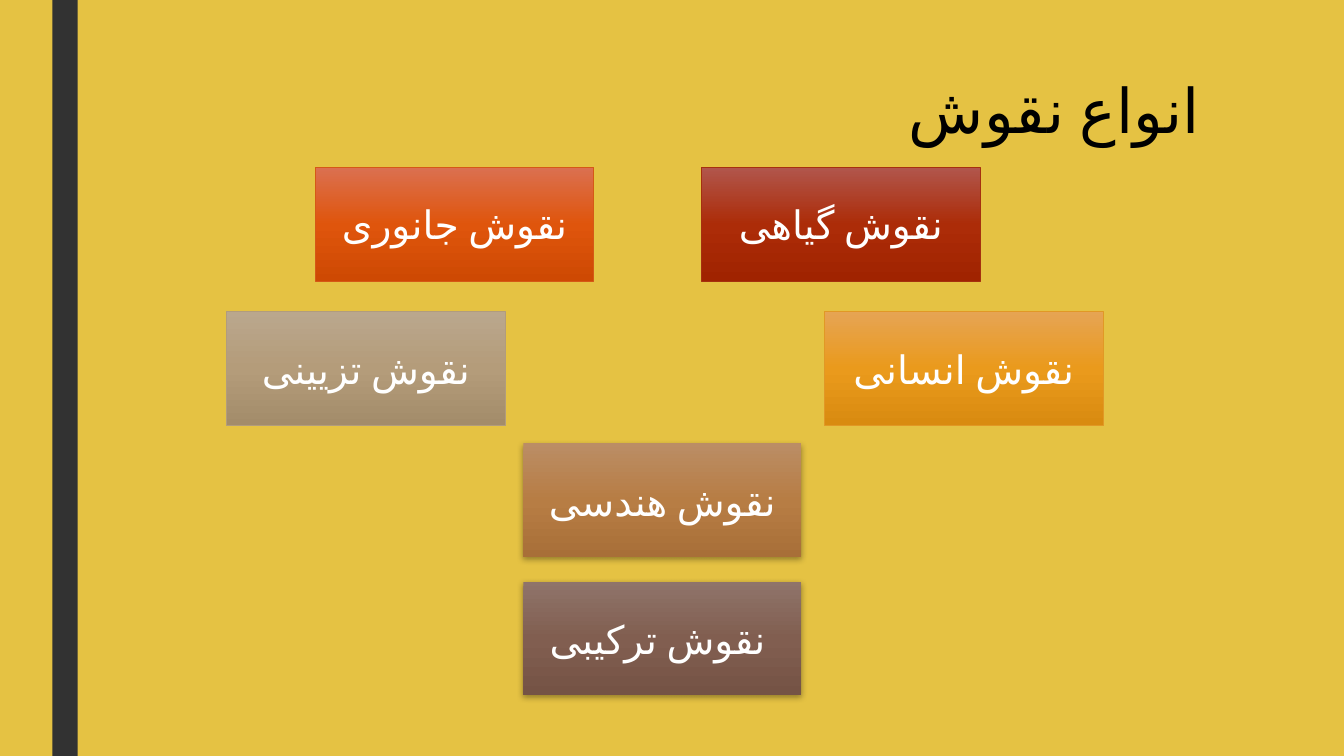
from copy import deepcopy

from pptx import Presentation
from pptx.dml.color import RGBColor
from pptx.enum.lang import MSO_LANGUAGE_ID as LANG
from pptx.enum.shapes import MSO_SHAPE as SHAPE
from pptx.enum.text import MSO_ANCHOR as ANCHOR, PP_ALIGN as ALIGN
from pptx.oxml import parse_xml
from pptx.oxml.ns import nsdecls, qn
from pptx.util import Inches, Pt

FONT = "Cabin"
BOX_W, BOX_H = 2.76, 1.13
# text, left, top, gradient from top to bottom, outline (None: soft shadow instead)
MOTIFS = [
    ("نقوش گیاهی", 6.96, 1.66, ("B1564C", "AC2C08", "A02300"), "A5300F"),
    ("نقوش هندسی", 5.19, 4.4, ("BB8D65", "B77D44", "A86F38"), None),
    ("نقوش جانوری", 3.13, 1.66, ("DB7050", "DF550C", "CE4903"), "D55816"),
    ("نقوش انسانی", 8.18, 3.09, ("E6A454", "EA9A1C", "D98B10"), "E19825"),
    ("نقوش تزیینی", 2.25, 3.09, ("BAA78D", "B49C7A", "A38C6A"), "B19C7D"),
    ("نقوش ترکیبی ", 5.19, 5.77, ("8F746A", "815E50", "755345"), None),
]


def rgb(color):
    return RGBColor.from_string(color)


def write(tf, text, size, color, align, anchor):
    tf.word_wrap = True
    tf.vertical_anchor = anchor
    p = tf.paragraphs[0]
    p.alignment = align
    r = p.add_run()
    r.text = text
    formats = {"size": Pt(size), "name": FONT, "bold": False,
               "language_id": LANG.FARSI}
    for name, value in formats.items():
        setattr(r.font, name, value)
    r.font.color.rgb = rgb(color)
    return p


def add_rect(s, left, top, width, height):
    sp = s.shapes.add_shape(SHAPE.RECTANGLE, Inches(left), Inches(top),
                            Inches(width), Inches(height))
    sp.shadow.inherit = False
    sp.line.fill.background()
    return sp


def fill_gradient(sp, colors):
    """Fill from top to bottom with evenly spaced colours."""
    sp.fill.gradient()
    sp.fill.gradient_angle = 270
    stops = sp._element.spPr.find(qn("a:gradFill")).find(qn("a:gsLst"))
    for _ in range(len(colors) - len(stops)):
        stops.append(deepcopy(stops[0]))
    for i, (stop, color) in enumerate(zip(sp.fill.gradient_stops, colors)):
        stop.position = i / (len(colors) - 1)
        stop.color.rgb = rgb(color)


def add_soft_shadow(sp):
    effects = sp._element.spPr.find(qn("a:effectLst"))
    effects.append(parse_xml(
        f'<a:outerShdw {nsdecls("a")} blurRad="{Pt(4.5)}" dist="{Pt(1.5)}" '
        'dir="5400000" algn="ctr" rotWithShape="0"><a:srgbClr val="000000">'
        '<a:alpha val="35000"/></a:srgbClr></a:outerShdw>'))


def add_motif(s, text, left, top, colors, outline):
    sp = add_rect(s, left, top, BOX_W, BOX_H)
    fill_gradient(sp, colors)
    if outline:
        sp.line.color.rgb = rgb(outline)
        sp.line.width = Pt(0.5)
    else:
        add_soft_shadow(sp)
    write(sp.text_frame, text, 28, "FFFFFF", ALIGN.CENTER, ANCHOR.MIDDLE)


def format_title(title, text):
    box = {"left": 1.5, "top": 0.75, "width": 10.5, "height": 1.62}
    for name, value in box.items():
        setattr(title, name, Inches(value))
    p = write(title.text_frame, text, 44, "000000", ALIGN.RIGHT, ANCHOR.TOP)
    p.line_spacing = 0.89
    p._p.get_or_add_pPr().set("rtl", "1")


def main():
    prs = Presentation()
    prs.slide_width, prs.slide_height = Inches(13.33), Inches(7.5)
    s = prs.slides.add_slide(prs.slide_layouts[5])
    s.background.fill.solid()
    s.background.fill.fore_color.rgb = rgb("E5C243")
    bar = add_rect(s, 0.52, 0, 0.25, 7.5)
    bar.fill.solid()
    bar.fill.fore_color.rgb = rgb("323232")
    format_title(s.shapes.title, "انواع نقوش")
    for motif in MOTIFS:
        add_motif(s, *motif)
    prs.save("out.pptx")


if __name__ == "__main__":
    main()
